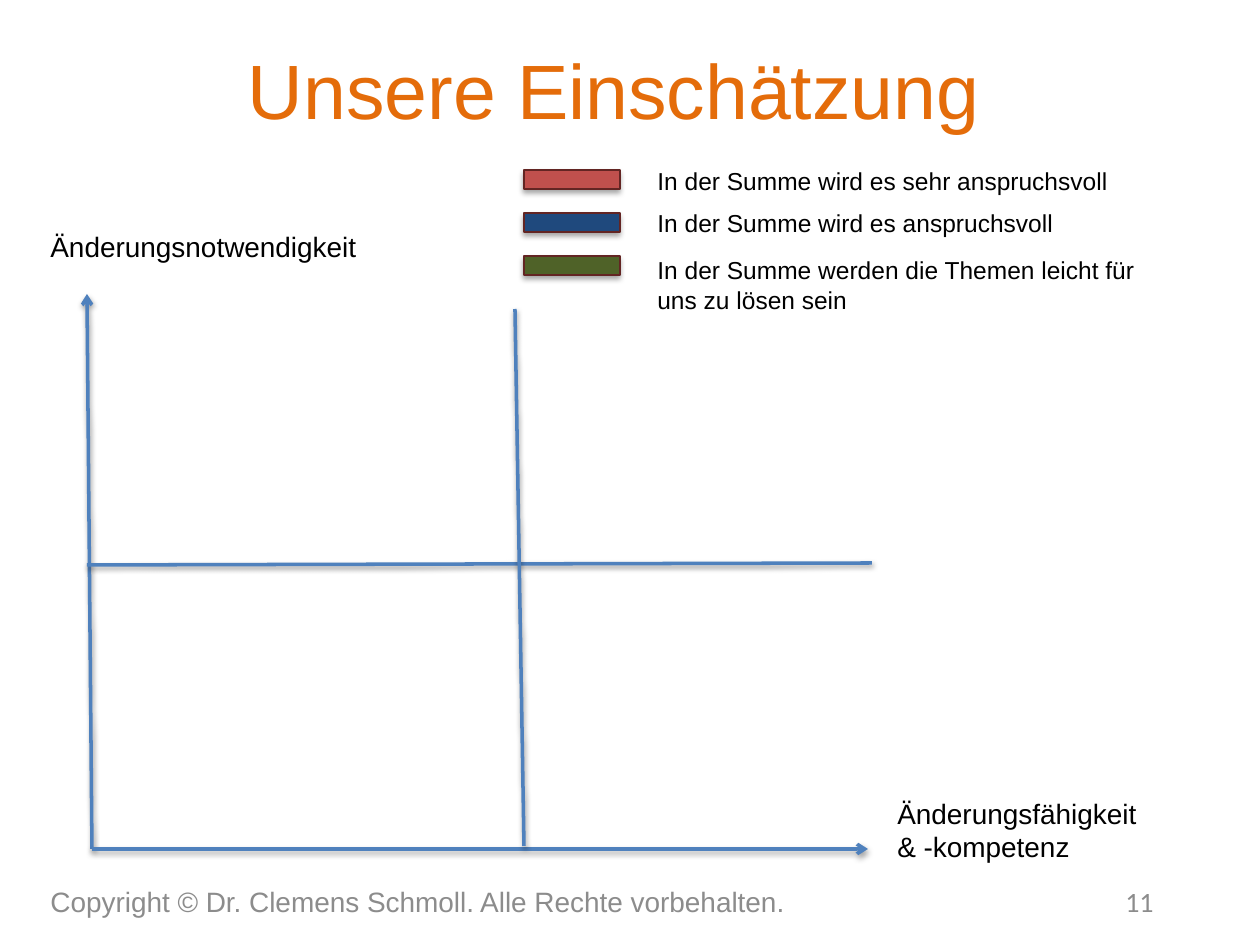
from dataclasses import dataclass

from lxml import etree
from pptx import Presentation
from pptx import util as u
from pptx.dml.color import RGBColor
from pptx.enum import shapes, text
from pptx.oxml import parse_xml
from pptx.oxml.ns import nsdecls, qn


@dataclass(frozen=True)
class Theme:
    font: str = "Arial"
    number_font: str = "Calibri"
    title: str = "E46C0A"
    ink: str = "000000"
    muted: str = "8C8C8C"
    axis: str = "4F81BD"
    key_border: str = "632523"
    demanding: str = "C0504D"
    moderate: str = "1F497D"
    easy: str = "4F6228"
    title_size: int = 44
    label_size: int = 16
    key_size: int = 14


class SlideBuilder:
    """Holds the theme and the current slide, and draws each kind of element in px."""

    def __init__(self, slide, theme):
        self.slide = slide
        self.theme = theme

    def px(self, *lengths):
        return [u.Emu(round(length * 914400 / 126)) for length in lengths]

    def style(self, frame, size, color, font=None, align=text.PP_ALIGN.LEFT):
        for paragraph in frame.paragraphs:
            paragraph.alignment = align
            paragraph.font.size = u.Pt(size)
            paragraph.font.name = font or self.theme.font
            paragraph.font.color.rgb = RGBColor.from_string(color)

    def shadow(self, element, opacity, distance):
        element._element.spPr.append(parse_xml(
            f'<a:effectLst {nsdecls("a")}><a:outerShdw blurRad="{u.Pt(3.1)}" '
            f'dist="{u.Pt(distance)}" dir="5400000" rotWithShape="0">'
            f'<a:srgbClr val="000000"><a:alpha val="{opacity * 1000}"/></a:srgbClr>'
            '</a:outerShdw></a:effectLst>'))

    def title(self, wording, box):
        heading = self.slide.shapes.title
        heading.left, heading.top, heading.width, heading.height = self.px(*box)
        heading.text_frame.text = wording
        heading.text_frame.vertical_anchor = text.MSO_ANCHOR.MIDDLE
        self.style(heading.text_frame, self.theme.title_size, self.theme.title,
                   align=text.PP_ALIGN.CENTER)

    def label(self, wording, box, size, wrap=False):
        frame = self.slide.shapes.add_textbox(*self.px(*box)).text_frame
        frame.text = wording
        frame.word_wrap = wrap
        frame.auto_size = text.MSO_AUTO_SIZE.SHAPE_TO_FIT_TEXT
        self.style(frame, size, self.theme.ink)

    def footer(self, wording, box, font=None, align=text.PP_ALIGN.LEFT):
        frame = self.slide.shapes.add_textbox(*self.px(*box)).text_frame
        frame.text = wording
        frame.word_wrap = True
        frame.vertical_anchor = text.MSO_ANCHOR.MIDDLE
        self.style(frame, self.theme.label_size, self.theme.muted, font, align)

    def line(self, start, end, arrow=False):
        connector = self.slide.shapes.add_connector(
            shapes.MSO_CONNECTOR.STRAIGHT, *self.px(*start, *end))
        connector.line.color.rgb = RGBColor.from_string(self.theme.axis)
        connector.line.width = u.Pt(2)
        if arrow:
            etree.SubElement(connector.line._get_or_add_ln(), qn("a:tailEnd"), type="arrow")
        self.shadow(connector, 38, 1.6)

    def key(self, box, color):
        swatch = self.slide.shapes.add_shape(shapes.MSO_SHAPE.RECTANGLE, *self.px(*box))
        swatch.fill.solid()
        swatch.fill.fore_color.rgb = RGBColor.from_string(color)
        swatch.line.color.rgb = RGBColor.from_string(self.theme.key_border)
        swatch.line.width = u.Pt(0.75)
        self.shadow(swatch, 35, 1.8)


def main():
    theme = Theme()
    deck = Presentation()
    deck.slide_width, deck.slide_height = u.Inches(10), u.Inches(7.5)
    page = SlideBuilder(deck.slides.add_slide(deck.slide_layouts[5]), theme)

    page.title("Unsere Einschätzung", (63, 10, 1102, 158))

    origin = (92, 849)
    page.line(origin, (87, 294), arrow=True)
    page.line(origin, (868, 849), arrow=True)
    page.line((87, 565), (872, 563))
    page.line((524, 846), (515, 309))
    page.label("Änderungsfähigkeit\v& -kompetenz", (885, 790, 267, 81), theme.label_size)
    page.label("Änderungsnotwendigkeit", (38, 223, 335, 47), theme.label_size)

    legend = [
        (theme.demanding, "In der Summe wird es sehr anspruchsvoll", (645, 160, 479, 43)),
        (theme.moderate, "In der Summe wird es anspruchsvoll", (645, 202, 425, 43)),
        (theme.easy, "In der Summe werden die Themen leicht für\vuns zu lösen sein",
         (645, 249, 507, 72)),
    ]
    for row, (color, meaning, box) in enumerate(legend):
        page.key((524, 170 + 43 * row, 96, 19), color)
        page.label(meaning, box, theme.key_size, wrap=row == 2)

    page.footer("Copyright © Dr. Clemens Schmoll. Alle Rechte vorbehalten.", (38, 876, 801, 50))
    page.footer("11", (872, 876, 294, 50), theme.number_font, text.PP_ALIGN.RIGHT)

    deck.save("out.pptx")


if __name__ == "__main__":
    main()
